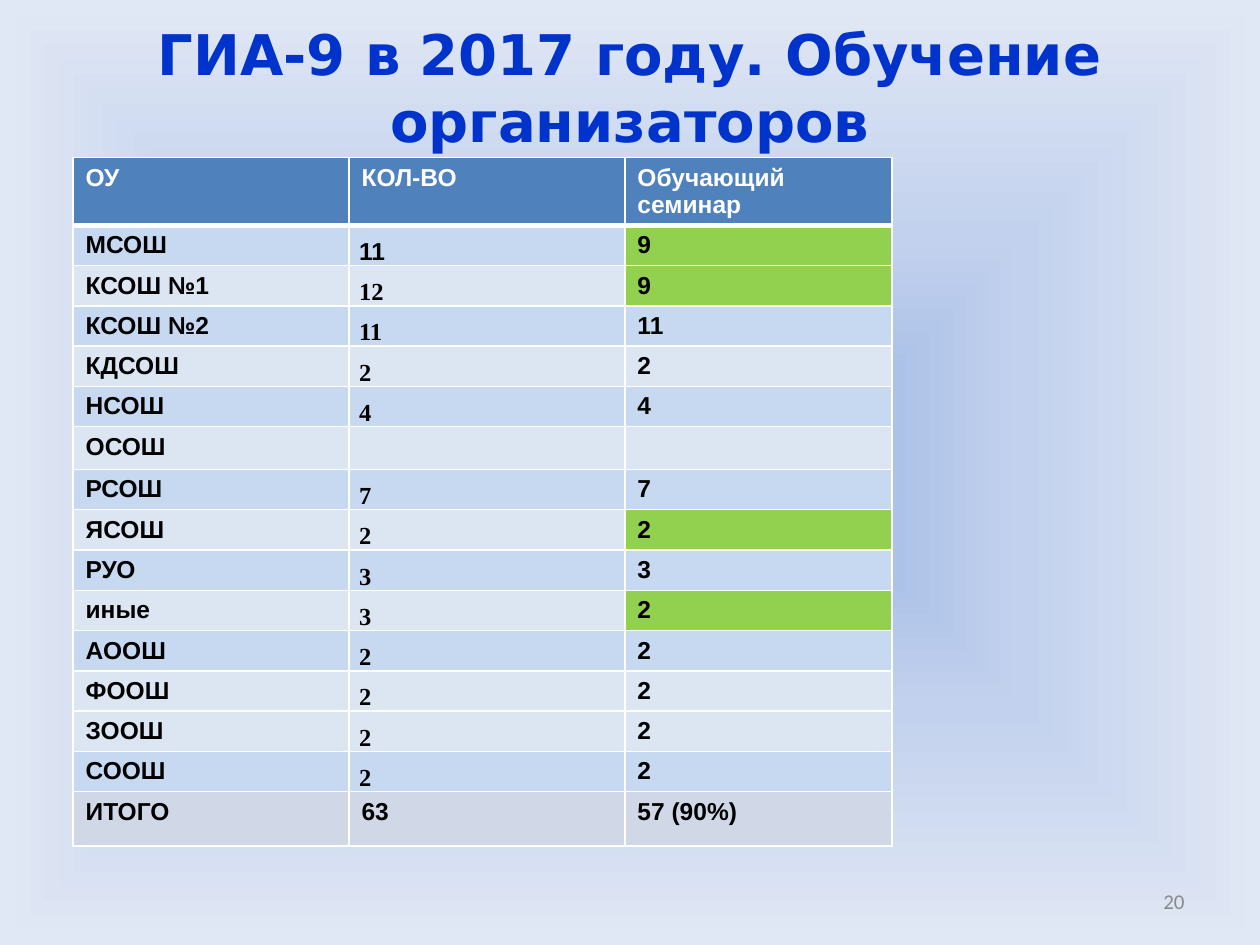
"""Build the slide on the training of GIA-9 exam organisers."""
import dataclasses
import typing

import lxml.etree
import pptx
import pptx.dml.color
import pptx.enum.text
import pptx.oxml.ns
import pptx.util

WIDTH = pptx.util.Inches(10)
HEIGHT = pptx.util.Inches(7.5)
WHITE = pptx.dml.color.RGBColor(0xFF, 0xFF, 0xFF)
BLACK = pptx.dml.color.RGBColor(0x00, 0x00, 0x00)
GREY = pptx.dml.color.RGBColor(0x89, 0x89, 0x89)
TITLE_BLUE = pptx.dml.color.RGBColor(0x00, 0x33, 0xCC)
HEADER_BLUE = pptx.dml.color.RGBColor(0x4F, 0x81, 0xBD)
DARK_BAND = pptx.dml.color.RGBColor(0xC6, 0xD9, 0xF1)
LIGHT_BAND = pptx.dml.color.RGBColor(0xDC, 0xE6, 0xF2)
TOTAL_BAND = pptx.dml.color.RGBColor(0xD0, 0xD8, 0xE8)
GREEN = pptx.dml.color.RGBColor(0x92, 0xD0, 0x50)
BACKGROUND_STOPS = {
    0: pptx.dml.color.RGBColor(0x9A, 0xB5, 0xE4),
    50: pptx.dml.color.RGBColor(0xC2, 0xD1, 0xED),
    100: pptx.dml.color.RGBColor(0xE1, 0xE8, 0xF5),
}
COLUMN_WIDTHS = (2.19, 2.19, 2.12)


@dataclasses.dataclass(frozen=True)
class Area:
    """A rectangle in shares of the slide's size."""

    left: float
    top: float
    width: float
    height: float

    def lengths(self) -> tuple[int, int, int, int]:
        """Return left, top, width and height in slide units."""
        return (int(WIDTH * self.left), int(HEIGHT * self.top),
                int(WIDTH * self.width), int(HEIGHT * self.height))


@dataclasses.dataclass(frozen=True)
class TextStyle:
    """The look of one text run."""

    font: str
    size: int
    color: pptx.dml.color.RGBColor
    bold: bool = True


@dataclasses.dataclass(frozen=True)
class School:
    """One table row: a school, its organisers and those trained."""

    name: str
    count: str
    trained: str
    band: pptx.dml.color.RGBColor
    incomplete: bool = False
    count_font: str = "Times New Roman"
    height: float = 0.32


TITLE_AREA = Area(0.05, 0.04, 0.9, 0.104)
TABLE_AREA = Area(0.058, 1 / 6, 0.65, 0.728)
NUMBER_AREA = Area(0.717, 0.927, 0.233, 0.053)
HEADER_STYLE = TextStyle("Arial", 14, WHITE)
CELL_STYLE = TextStyle("Arial", 14, BLACK)
HEADINGS = ("ОУ", "КОЛ-ВО", "Обучающий семинар")
TOTALS = ("ИТОГО", "63", "57 (90%)")
SCHOOLS = (
    School("МСОШ", "11", "9", DARK_BAND, True, "Arial"),
    School("КСОШ №1", "12", "9", LIGHT_BAND, True),
    School("КСОШ №2", "11", "11", DARK_BAND),
    School("КДСОШ", "2", "2", LIGHT_BAND),
    School("НСОШ", "4", "4", DARK_BAND),
    School("ОСОШ", "", "", LIGHT_BAND, height=0.34),
    School("РСОШ", "7", "7", DARK_BAND),
    School("ЯСОШ", "2", "2", LIGHT_BAND, True),
    School("РУО", "3", "3", DARK_BAND),
    School("иные", "3", "2", LIGHT_BAND, True),
    School("АООШ", "2", "2", DARK_BAND),
    School("ФООШ", "2", "2", LIGHT_BAND),
    School("ЗООШ", "2", "2", LIGHT_BAND),
    School("СООШ", "2", "2", DARK_BAND),
)


def add_child(parent: typing.Any, tag: str, **attributes: str) -> typing.Any:
    """Append a drawing element to its parent."""
    return lxml.etree.SubElement(parent, pptx.oxml.ns.qn(tag), attributes)


def add_text(paragraph: typing.Any, text: str, style: TextStyle) -> None:
    """Add one styled run, or only its size when the text is empty."""
    if not text:
        add_child(paragraph._p, "a:endParaRPr", sz=str(style.size * 100))
        return
    run = paragraph.add_run()
    run.text = text
    run.font.name = style.font
    run.font.size = pptx.util.Pt(style.size)
    run.font.bold = style.bold
    run.font.color.rgb = style.color


def paint_background(slide: typing.Any) -> None:
    """Fill the background with a gradient that grows from the centre."""
    slide.background.fill.gradient()
    gradient = slide._element.find(".//" + pptx.oxml.ns.qn("a:gradFill"))
    for child in list(gradient):
        gradient.remove(child)
    stops = add_child(gradient, "a:gsLst")
    for position, color in BACKGROUND_STOPS.items():
        stop = add_child(stops, "a:gs", pos=str(position * 1000))
        add_child(stop, "a:srgbClr", val=str(color))
    shade = add_child(gradient, "a:path", path="shape")
    add_child(shade, "a:fillToRect", l="50000", t="50000", r="50000", b="50000")


def add_borders(cell: typing.Any, top: int = 1, bottom: int = 1) -> None:
    """Draw white cell borders with widths in points."""
    properties = cell._tc.get_or_add_tcPr()
    sides = {"a:lnL": 1, "a:lnR": 1, "a:lnT": top, "a:lnB": bottom}
    for index, (tag, points) in enumerate(sides.items()):
        line = add_child(properties, tag, w=str(pptx.util.Pt(points)))
        add_child(add_child(line, "a:solidFill"), "a:srgbClr", val=str(WHITE))
        properties.insert(index, line)


def fill_cell(cell: typing.Any, text: str, style: TextStyle,
              color: pptx.dml.color.RGBColor) -> None:
    """Write a cell's text and set its fill."""
    cell.fill.solid()
    cell.fill.fore_color.rgb = color
    add_text(cell.text_frame.paragraphs[0], text, style)


def fill_school(cells: typing.Sequence[typing.Any], school: School) -> None:
    """Write one school's row."""
    count_style = dataclasses.replace(CELL_STYLE, font=school.count_font)
    fill_cell(cells[0], school.name, CELL_STYLE, school.band)
    fill_cell(cells[1], school.count, count_style, school.band)
    fill_cell(cells[2], school.trained, CELL_STYLE,
              GREEN if school.incomplete else school.band)
    if school.count:
        cells[1].vertical_anchor = pptx.enum.text.MSO_ANCHOR.BOTTOM
        cells[1].margin_left = cells[1].margin_right = pptx.util.Inches(0.08)
        cells[1].margin_top = cells[1].margin_bottom = 0


def add_training_table(slide: typing.Any) -> None:
    """Add the table of schools with its heading and total rows."""
    heights = (0.53, *(school.height for school in SCHOOLS), 0.43)
    table = slide.shapes.add_table(
        len(heights), len(HEADINGS), *TABLE_AREA.lengths()).table
    for column, width in zip(table.columns, COLUMN_WIDTHS):
        column.width = pptx.util.Inches(width)
    rows = list(table.rows)
    for row, height in zip(rows, heights):
        row.height = pptx.util.Inches(height)
    for cell, text in zip(rows[0].cells, HEADINGS):
        fill_cell(cell, text, HEADER_STYLE, HEADER_BLUE)
    for row, school in zip(rows[1:], SCHOOLS):
        fill_school(list(row.cells), school)
    for cell, text in zip(rows[-1].cells, TOTALS):
        fill_cell(cell, text, CELL_STYLE, TOTAL_BAND)
    for index, row in enumerate(rows):
        for cell in row.cells:
            add_borders(cell, top=3 if index == 1 else 1,
                        bottom=3 if index == 0 else 1)


def write_line(shape: typing.Any, text: str, style: TextStyle,
               alignment: pptx.enum.text.PP_ALIGN) -> None:
    """Write one vertically centred paragraph into a shape."""
    frame = shape.text_frame
    frame.word_wrap = True
    frame.auto_size = pptx.enum.text.MSO_AUTO_SIZE.NONE
    frame.vertical_anchor = pptx.enum.text.MSO_ANCHOR.MIDDLE
    frame.paragraphs[0].alignment = alignment
    add_text(frame.paragraphs[0], text, style)


def main() -> None:
    """Build and save the presentation."""
    presentation = pptx.Presentation()
    presentation.slide_width, presentation.slide_height = WIDTH, HEIGHT
    slide = presentation.slides.add_slide(presentation.slide_layouts[5])
    paint_background(slide)
    title = slide.shapes.title
    title.left, title.top, title.width, title.height = TITLE_AREA.lengths()
    write_line(title, "ГИА-9 в 2017 году. Обучение организаторов",
               TextStyle("DejaVu Sans", 32, TITLE_BLUE),
               pptx.enum.text.PP_ALIGN.CENTER)
    add_training_table(slide)
    number = slide.shapes.add_textbox(*NUMBER_AREA.lengths())
    write_line(number, "20", TextStyle("Calibri", 12, GREY, False),
               pptx.enum.text.PP_ALIGN.RIGHT)
    presentation.save("out.pptx")


if __name__ == "__main__":
    main()
